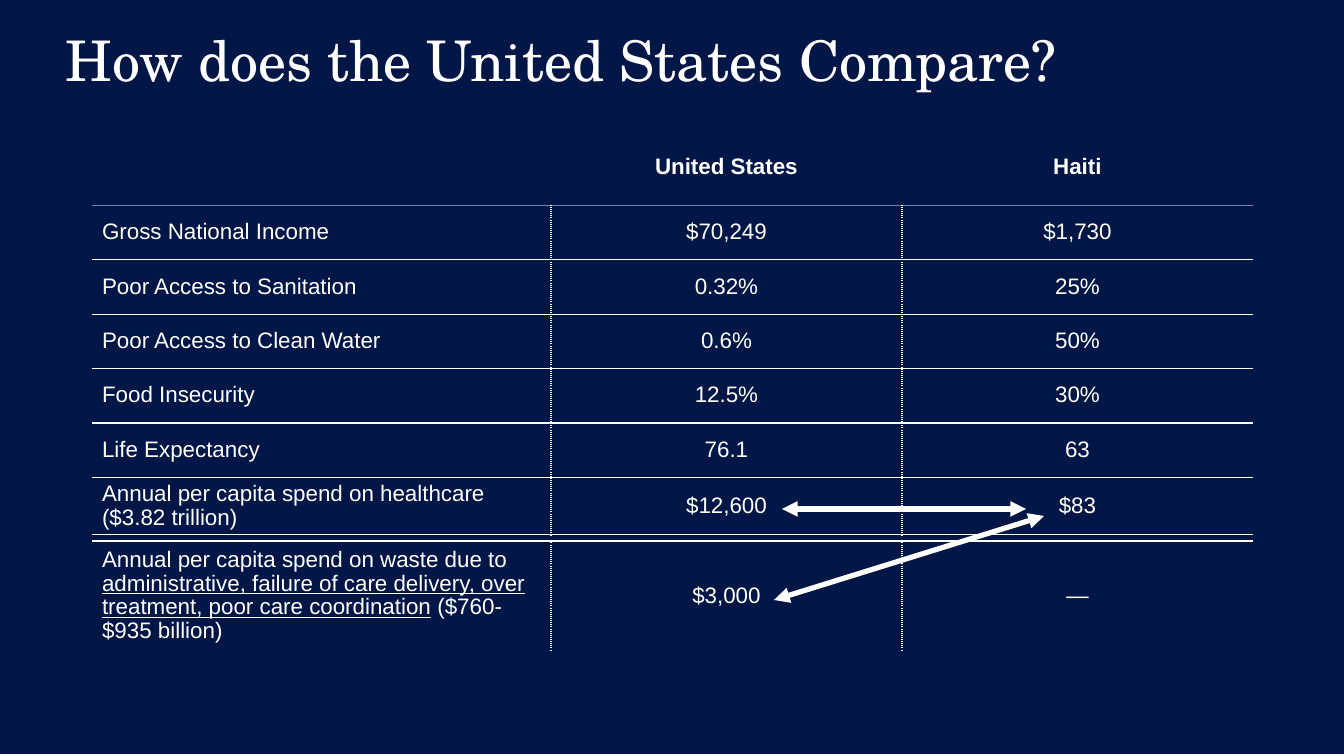
"""Build a slide comparing health figures for the United States and Haiti."""
from dataclasses import dataclass

from lxml import etree
from pptx import Presentation
from pptx.dml.color import RGBColor
from pptx.enum.shapes import MSO_CONNECTOR, MSO_SHAPE
from pptx.enum.text import MSO_ANCHOR, PP_ALIGN
from pptx.oxml.ns import qn
from pptx.util import Pt

STRAIGHT = MSO_CONNECTOR.STRAIGHT
RECTANGLE = MSO_SHAPE.RECTANGLE
TOP, MIDDLE = MSO_ANCHOR.TOP, MSO_ANCHOR.MIDDLE
LEFT, CENTER = PP_ALIGN.LEFT, PP_ALIGN.CENTER
EMU_PER_PX = 914400 / 100.8


@dataclass(frozen=True)
class Theme:
    """Colours, fonts and point sizes of the slide."""
    navy: str = "001646"
    white: str = "FFFFFF"
    header_rule: str = "6F86A8"
    title_font: str = "TeX Gyre Schola"
    body_font: str = "Arial"
    title_size: int = 40
    body_size: int = 16
    rule: float = 1
    arrow: float = 3.75


def px(length):
    """Turn pixels into EMU."""
    return round(length * EMU_PER_PX)


class SlideBuilder:
    """Draw styled elements on one slide."""

    def __init__(self, slide, theme):
        self.shapes = slide.shapes
        self.theme = theme

    def panel(self, left, top, width, height, color):
        """Add a plain filled rectangle."""
        panel = self.shapes.add_shape(RECTANGLE, *map(px, (left, top, width, height)))
        panel.shadow.inherit = False
        panel.fill.solid()
        panel.fill.fore_color.rgb = RGBColor.from_string(color)
        panel.line.fill.background()

    def style_font(self, font, name, size, bold=False):
        """Apply the white text style to a font."""
        font.name, font.size, font.bold = name, Pt(size), bold
        font.color.rgb = RGBColor.from_string(self.theme.white)

    def title(self, left, top, width, height, wording):
        """Add the slide heading."""
        frame = self.shapes.add_textbox(*map(px, (left, top, width, height))).text_frame
        frame.word_wrap = True
        frame.text = wording
        heading = frame.paragraphs[0]
        heading.line_spacing = 0.9
        self.style_font(heading.runs[0].font, self.theme.title_font, self.theme.title_size)

    def border(self, cell, side, color=None, dash="solid"):
        """Set one cell edge, or clear it when no colour is given."""
        edge = etree.SubElement(cell._tc.get_or_add_tcPr(), qn(f"a:ln{side}"),
                                w=str(Pt(self.theme.rule)))
        if color is None:
            etree.SubElement(edge, qn("a:noFill"))
            return
        paint = etree.SubElement(edge, qn("a:solidFill"))
        etree.SubElement(paint, qn("a:srgbClr"), val=color)
        etree.SubElement(edge, qn("a:prstDash"), val=dash)

    def cell(self, cell, parts, column, edges, is_header):
        """Fill one cell; every second part of its wording is underlined."""
        for side in "LRTB":
            self.border(cell, side, *edges.get(side, ()))
        cell.fill.background()
        cell.vertical_anchor = TOP if is_header else MIDDLE
        paragraph = cell.text_frame.paragraphs[0]
        paragraph.alignment = CENTER if column else LEFT
        paragraph.line_spacing = 0.95
        for index, part in enumerate(parts):
            run = paragraph.add_run()
            run.text = part
            self.style_font(run.font, self.theme.body_font, self.theme.body_size, is_header)
            run.font.underline = index % 2 == 1

    def table(self, left, top, height, widths, rows, has_header, closed):
        """Add a ruled table with dotted column dividers."""
        frame = self.shapes.add_table(len(rows), len(widths), px(left), px(top),
                                      px(sum(widths)), px(height))
        table = frame.table
        table.first_row = table.horz_banding = False
        for column, width in enumerate(widths):
            table.columns[column].width = px(width)
        solid, divider = (self.theme.white,), (self.theme.white, "sysDot")
        for row, record in enumerate(rows):
            is_header = has_header and row == 0
            for column, wording in enumerate(record):
                edges = {}
                if not is_header:
                    edges["T"] = (self.theme.header_rule,) if has_header and row == 1 else solid
                    if column > 0:
                        edges["L"] = divider
                    if column < len(widths) - 1:
                        edges["R"] = divider
                if closed or row < len(rows) - 1:
                    edges["B"] = (self.theme.header_rule,) if is_header else solid
                parts = wording if isinstance(wording, tuple) else (wording,)
                self.cell(table.cell(row, column), parts, column, edges, is_header)

    def double_arrow(self, *ends):
        """Add a line with an arrowhead at both ends."""
        arrow = self.shapes.add_connector(STRAIGHT, *map(px, ends))
        arrow.line.width = Pt(self.theme.arrow)
        arrow.line.color.rgb = RGBColor.from_string(self.theme.white)
        for end in ("a:headEnd", "a:tailEnd"):
            etree.SubElement(arrow.line._get_or_add_ln(), qn(end), type="triangle")
        etree.SubElement(arrow._element.spPr, qn("a:effectLst"))


COLUMN_WIDTHS = (459, 351, 351)
COMPARISON = (
    ("", "United States", "Haiti"),
    ("Gross National Income", "$70,249", "$1,730"),
    ("Poor Access to Sanitation", "0.32%", "25%"),
    ("Poor Access to Clean Water", "0.6%", "50%"),
    ("Food Insecurity", "12.5%", "30%"),
    ("Life Expectancy", "76.1", "63"),
    ("Annual per capita spend on healthcare ($3.82 trillion)", "$12,600", "$83"),
)
WASTE = (
    (("Annual per capita spend on waste due to ",
      "administrative, failure of care delivery, over treatment, poor care coordination",
      " ($760-$935 billion)"), "$3,000", "—"),
)


def main():
    """Build and save the slide."""
    presentation = Presentation()
    presentation.slide_width, presentation.slide_height = px(1344), px(756)
    theme = Theme()
    builder = SlideBuilder(presentation.slides.add_slide(presentation.slide_layouts[6]), theme)
    builder.panel(0, 0, 1344, 754, theme.navy)
    builder.table(92, 151, 381, COLUMN_WIDTHS, COMPARISON, has_header=True, closed=True)
    builder.double_arrow(782, 509, 1026, 509)
    builder.table(92, 541, 110, COLUMN_WIDTHS, WASTE, has_header=False, closed=False)
    builder.double_arrow(774, 600, 1044, 516)
    builder.title(56, 28, 1261, 59, "How does the United States Compare?")
    presentation.save("out.pptx")


if __name__ == "__main__":
    main()
